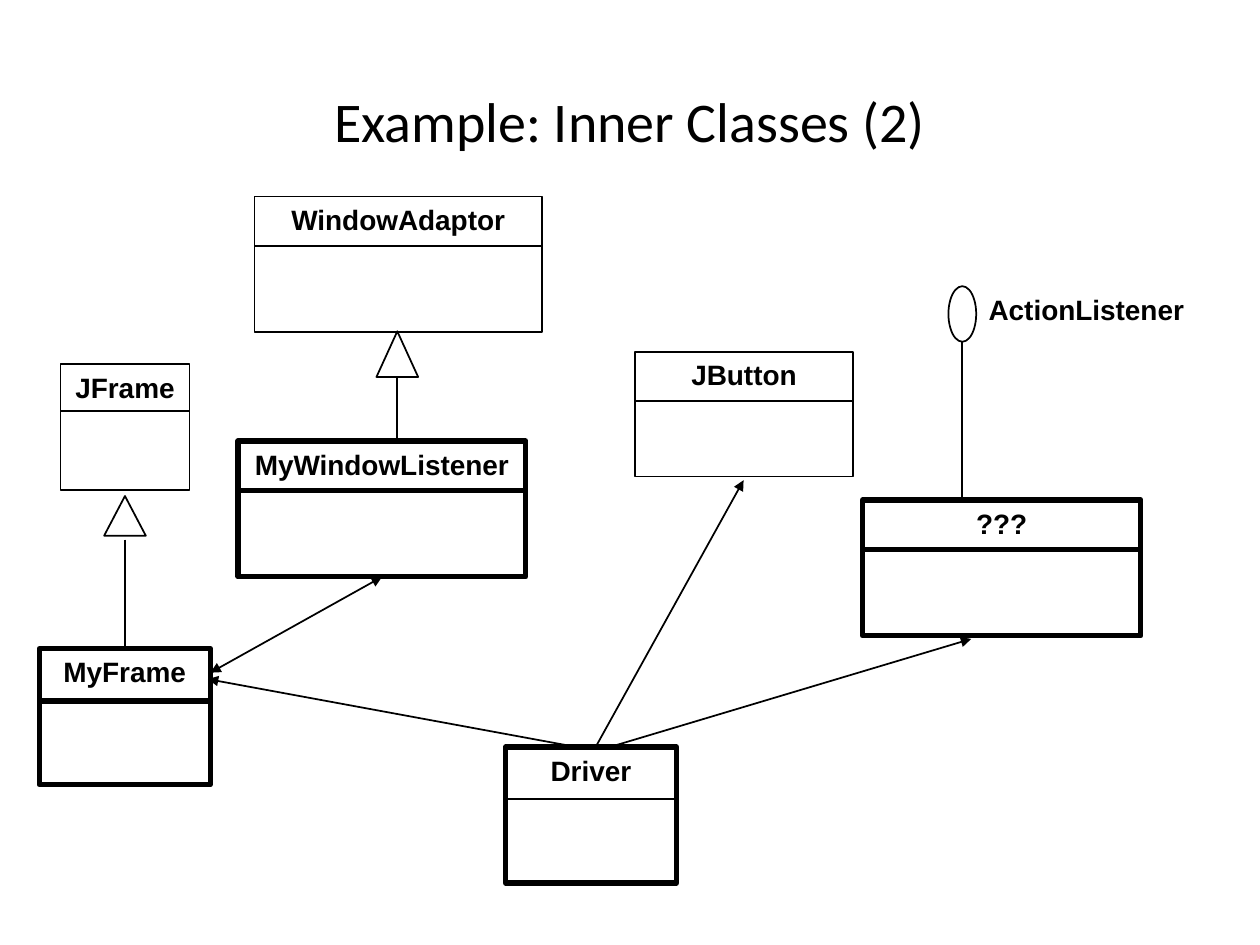
import pptx
import pptx.util
import pptx.dml.color
import pptx.enum.shapes
import pptx.enum.text
from lxml import etree
from pptx.util import Cm

BLACK, WHITE = "000000", "FFFFFF"
THIN, THICK = 1, 3
SHAPES = pptx.enum.shapes.MSO_SHAPE
ALIGN = pptx.enum.text.PP_ALIGN
ANCHOR = pptx.enum.text.MSO_ANCHOR


def color(code):
    """Return the colour for a hex string."""
    return pptx.dml.color.RGBColor.from_string(code)


def write(shape, text, font, size, bold=False, align=ALIGN.CENTER, anchor=ANCHOR.TOP):
    """Put one styled paragraph into a shape."""
    frame = shape.text_frame
    frame.word_wrap = True
    frame.vertical_anchor = anchor
    para = frame.paragraphs[0]
    para.text = text
    para.alignment = align
    para.font.name = font
    para.font.size = pptx.util.Pt(size)
    para.font.bold = bold
    para.font.color.rgb = color(BLACK)


def add_outline(page, kind, box, weight=THIN, fill=None):
    """Add a black-edged preset shape in the given box."""
    shape = page.shapes.add_shape(kind, *map(Cm, box))
    shape.shadow.inherit = False
    if fill:
        shape.fill.solid()
        shape.fill.fore_color.rgb = color(fill)
    else:
        shape.fill.background()
    shape.line.color.rgb = color(BLACK)
    shape.line.width = pptx.util.Pt(weight)
    return shape


def add_line(page, start, end, weight=THIN, arrows=()):
    """Add a straight line with triangles at the named ends."""
    line = page.shapes.add_connector(
        pptx.enum.shapes.MSO_CONNECTOR.STRAIGHT, *map(Cm, (*start, *end)))
    line.line.color.rgb = color(BLACK)
    line.line.width = pptx.util.Pt(weight)
    properties = line._element.spPr
    edge = line.line._get_or_add_ln()
    for arrow in arrows:
        etree.SubElement(edge, pptx.oxml.ns.qn(f"a:{arrow}"), type="triangle")
    etree.SubElement(properties, pptx.oxml.ns.qn("a:effectLst"))


def add_title(page, box, text):
    """Add the centred slide title."""
    write(page.shapes.add_textbox(*map(Cm, box)), text, "Calibri", 32,
          anchor=ANCHOR.MIDDLE)


def add_class(page, box, name, header, weight=THIN, divider=None, fill=None):
    """Add a class rectangle with its name above a divider."""
    left, top, width, _ = box
    shape = add_outline(page, SHAPES.RECTANGLE, box, weight, fill)
    write(shape, name, "Arial", 16, bold=True)
    add_line(page, (left, top + header), (left + width, top + header),
             divider or weight)


def add_inheritance(page, box, head_height, gap):
    """Add a hollow triangle with a stem down to the foot of the box."""
    left, top, width, height = box
    middle = left + width / 2
    add_line(page, (middle, top + head_height + gap), (middle, top + height))
    add_outline(page, SHAPES.ISOSCELES_TRIANGLE, (left, top, width, head_height),
                fill=WHITE)


def add_interface(page, box, name):
    """Add an interface lollipop with its name to the right."""
    left, top, width, height = box
    oval_width, oval_height = 0.56, 1.12
    middle = left + oval_width / 2
    add_outline(page, SHAPES.OVAL, (left, top, oval_width, oval_height))
    label = page.shapes.add_textbox(
        *map(Cm, (left + oval_width, top, width - oval_width, 0.94)))
    write(label, name, "Arial", 16, bold=True, align=ALIGN.LEFT)
    add_line(page, (middle, top + oval_height), (middle, top + height))


def main():
    """Build and save the class diagram slide."""
    deck = pptx.Presentation()
    deck.slide_width, deck.slide_height = Cm(25.4), Cm(19.05)
    page = deck.slides.add_slide(deck.slide_layouts[6])

    add_title(page, (1.9, 0.37, 21.6, 4.09), "Example: Inner Classes (2)")

    add_class(page, (0.79, 13.08, 3.45, 2.74), "MyFrame", 1.05, THICK)
    add_class(page, (10.19, 15.06, 3.45, 2.74), "Driver", 1.05, THICK, THIN, WHITE)
    add_class(page, (1.22, 7.34, 2.6, 2.54), "JFrame", 0.94)
    add_class(page, (4.8, 8.89, 5.8, 2.74), "MyWindowListener", 1, THICK)
    add_class(page, (5.13, 3.96, 5.8, 2.74), "WindowAdaptor", 1)
    add_class(page, (12.8, 7.09, 4.4, 2.52), "JButton", 1)
    add_class(page, (17.39, 10.08, 5.61, 2.74), "???", 1, THICK)

    add_inheritance(page, (2.1, 10, 0.84, 3.08), 0.8, 0.08)
    add_inheritance(page, (7.59, 6.68, 0.84, 2.21), 0.92, 0)
    add_interface(page, (19.12, 5.77, 5.16, 4.31), "ActionListener")

    add_line(page, (4.24, 13.56), (7.7, 11.63), arrows=("headEnd", "tailEnd"))
    for start, end in (
        ((11.79, 15.09), (4.19, 13.69)),
        ((11.99, 15.09), (14.99, 9.68)),
        ((12.19, 15.09), (19.58, 12.88)),
    ):
        add_line(page, start, end, arrows=("tailEnd",))

    deck.save("out.pptx")


if __name__ == "__main__":
    main()
